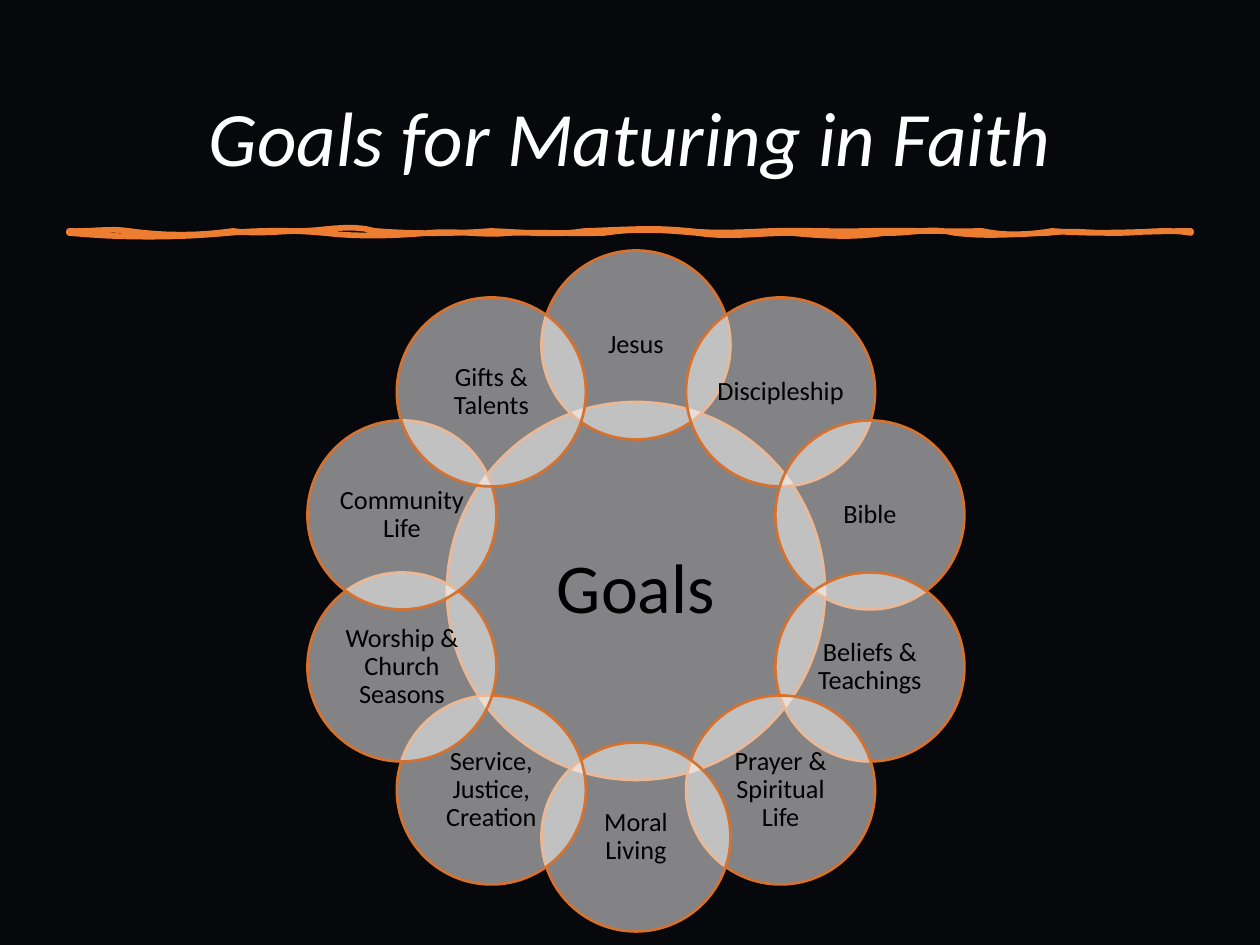
from math import cos, radians, sin
from lxml.etree import SubElement
from pptx import Presentation
from pptx.dml.color import RGBColor
from pptx.enum.shapes import MSO_SHAPE
from pptx.enum.text import MSO_ANCHOR, PP_ALIGN
from pptx.oxml.ns import qn
from pptx.util import Emu, Pt

PX = 914400 // 126
THEME = {
    "font": "Calibri",
    "background": RGBColor.from_string("07080B"),
    "title": RGBColor.from_string("FFFFFF"),
    "circle": RGBColor.from_string("FFFFFF"),
    "label": RGBColor.from_string("000000"),
    "outline": RGBColor.from_string("D7712C"),
    "rule": RGBColor.from_string("ED7D31"),
    "title_size": 44,
    "hub_size": 40,
    "label_size": 15,
}


def set_text(sp, text, size, color, inset, italic=False):
    tf = sp.text_frame
    tf.word_wrap = True
    tf.vertical_anchor = MSO_ANCHOR.MIDDLE
    tf.margin_left = tf.margin_right = tf.margin_top = tf.margin_bottom = inset * PX
    tf.text = text
    p = tf.paragraphs[0]
    p.alignment = PP_ALIGN.CENTER
    p.line_spacing = 0.9
    font = p.runs[0].font
    font.name, font.size, font.italic = THEME["font"], Pt(size), italic
    font.color.rgb = color


def add_circle(s, cx, cy, diameter, text, size, inset):
    sp = s.shapes.add_shape(
        MSO_SHAPE.OVAL, round((cx - diameter / 2) * PX), round((cy - diameter / 2) * PX),
        diameter * PX, diameter * PX)
    sp.shadow.inherit = False
    sp.fill.solid()
    sp.fill.fore_color.rgb = THEME["circle"]
    color = sp.fill._xPr.find(qn("a:solidFill"))[0]
    SubElement(color, qn("a:alpha")).set("val", "50000")
    sp.line.color.rgb = THEME["outline"]
    sp.line.width = Pt(1.5)
    set_text(sp, text, size, THEME["label"], inset)


prs = Presentation()
prs.slide_width, prs.slide_height = Emu(1260 * PX), Emu(945 * PX)
s = prs.slides.add_slide(prs.slide_layouts[6])
s.background.fill.solid()
s.background.fill.fore_color.rgb = THEME["background"]

title = s.shapes.add_textbox(87 * PX, 50 * PX, 1086 * PX, 183 * PX)
set_text(title, "Goals for Maturing in Faith", THEME["title_size"], THEME["title"], 6, True)

# Each wave: end x and the vertical pull of its two Bezier handles.
upper = [(129, 1, -3), (233, 5, 5), (294, 3, 1), (375, 1, -8), (491, 3, 3),
         (585, 1, 5), (689, -1, -4), (772, 3, 1), (866, -1, 1), (982, -1, 1),
         (1052, 5, 4), (1191, 4, 0)]
lower = [(1109, -5, 1), (1048, 0, -3), (955, 1, 4), (885, -6, 1), (791, 5, 3),
         (697, 0, 5), (604, -3, -5), (510, 1, -1), (428, 3, -3), (324, 3, 4),
         (229, -3, -3), (69, 5, 5)]
points = [(69 * PX, 231 * PX)]
x = 69
for base, waves in ((231, upper), (233, lower)):
    points.append((x * PX, base * PX))
    for end, pull_1, pull_2 in waves:
        for step in range(1, 9):
            t = step / 8
            y = base + 3 * t * (1 - t) * ((1 - t) * pull_1 + t * pull_2)
            points.append((round((x + (end - x) * t) * PX), round(y * PX)))
        x = end
builder = s.shapes.build_freeform(*points[0])
builder.add_line_segments(points[1:], close=True)
rule = builder.convert_to_shape()
rule.shadow.inherit = False
rule.fill.background()
rule.line.color.rgb = THEME["rule"]
rule.line.width = Pt(3.25)
SubElement(rule.line._get_or_add_ln(), qn("a:round"))

CX, CY, RING = 636, 591, 246
add_circle(s, CX, CY, 378, "Goals", THEME["hub_size"], 8)
goals = ["Jesus", "Discipleship", "Bible", "Beliefs & Teachings",
         "Prayer & Spiritual Life", "Moral Living", "Service, Justice, Creation",
         "Worship & Church Seasons", "Community Life", "Gifts & Talents"]
for i, goal in enumerate(goals):
    angle = radians(i * 360 / len(goals))
    add_circle(s, CX + RING * sin(angle), CY - RING * cos(angle), 189,
               goal, THEME["label_size"], 2)

prs.save("out.pptx")
